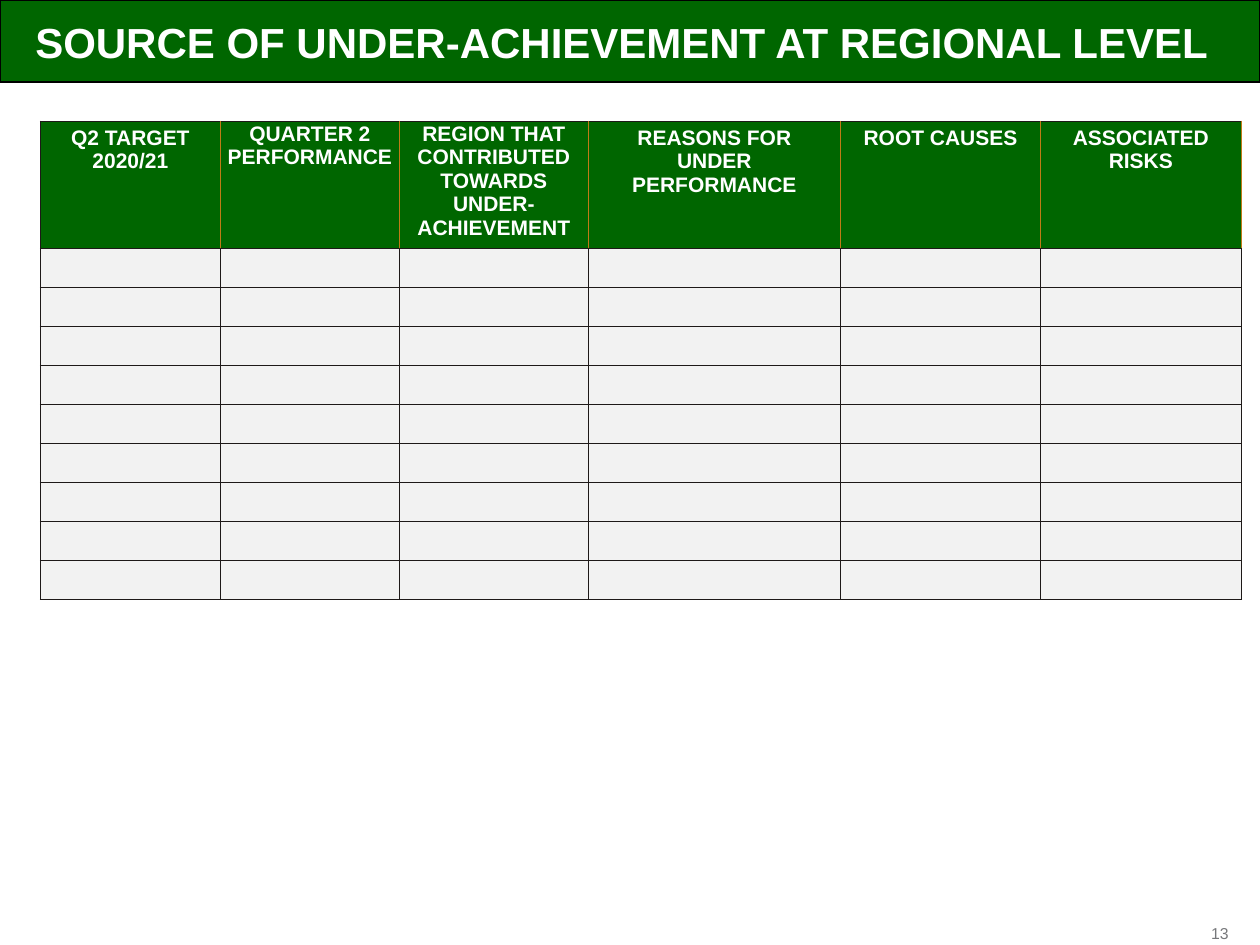
import pptx
import pptx.dml.color
import pptx.enum.shapes
import pptx.enum.text
import pptx.oxml.ns
import pptx.util
from dataclasses import dataclass
from lxml import etree

Inches, Pt = pptx.util.Inches, pptx.util.Pt
RGB = pptx.dml.color.RGBColor.from_string
ALIGN = pptx.enum.text.PP_ALIGN
ANCHOR = pptx.enum.text.MSO_ANCHOR
qn = pptx.oxml.ns.qn


@dataclass(frozen=True)
class Theme:
    font: str = "Arial"
    green: str = "006600"
    white: str = "FFFFFF"
    black: str = "000000"
    grey: str = "77787B"
    body_fill: str = "F2F2F2"
    border: str = "1E1918"
    divider: str = "BF7B17"
    title_size: float = 24
    header_size: float = 12
    number_size: float = 9
    border_width: float = 0.5


class Deck:
    def __init__(self, theme):
        self.theme = theme
        self.prs = pptx.Presentation()
        self.prs.slide_width, self.prs.slide_height = Inches(10), Inches(7.5)
        self.slide = self.prs.slides.add_slide(self.prs.slide_layouts[5])

    def style(self, tf, size, color, align, bold=False):
        for p in tf.paragraphs:
            p.alignment = align
            p.font.name, p.font.size, p.font.bold = self.theme.font, Pt(size), bold
            p.font.color.rgb = RGB(color)

    def banner(self, x, y, w, h):
        sp = self.slide.shapes.add_shape(
            pptx.enum.shapes.MSO_SHAPE.RECTANGLE, *map(Inches, (x, y, w, h)))
        sp.shadow.inherit = False
        sp.fill.solid()
        sp.fill.fore_color.rgb = RGB(self.theme.green)
        sp.line.color.rgb = RGB(self.theme.black)
        sp.line.width = Pt(1)
        # Keep the banner behind the title
        self.slide.shapes.title.element.addprevious(sp.element)

    def title(self, text, x, y, w, h):
        sp = self.slide.shapes.title
        sp.left, sp.top, sp.width, sp.height = map(Inches, (x, y, w, h))
        tf = sp.text_frame
        tf.text = text
        tf.word_wrap = True
        tf.auto_size = pptx.enum.text.MSO_AUTO_SIZE.NONE
        tf.vertical_anchor = ANCHOR.TOP
        self.style(tf, self.theme.title_size, self.theme.white, ALIGN.LEFT, True)

    def page_number(self, text, x, y, w, h):
        tf = self.slide.shapes.add_textbox(*map(Inches, (x, y, w, h))).text_frame
        tf.margin_left = tf.margin_top = tf.margin_right = tf.margin_bottom = 0
        tf.word_wrap = True
        tf.vertical_anchor = ANCHOR.MIDDLE
        tf.text = text
        self.style(tf, self.theme.number_size, self.theme.grey, ALIGN.RIGHT)

    def cell(self, cell, text, fill, margins, borders):
        cell.margin_left = cell.margin_right = Inches(margins[0])
        cell.margin_top, cell.margin_bottom = Inches(margins[1]), Inches(margins[2])
        cell.text = text
        self.style(cell.text_frame, self.theme.header_size, self.theme.white,
                   ALIGN.CENTER, True)
        # Borders come before the fill in the cell properties
        tc_pr = cell._tc.get_or_add_tcPr()
        for side, color in zip("LRTB", borders):
            ln = etree.SubElement(tc_pr, qn(f"a:ln{side}"),
                                  w=str(Pt(self.theme.border_width)))
            solid = etree.SubElement(ln, qn("a:solidFill"))
            etree.SubElement(solid, qn("a:srgbClr"), val=color)
        cell.fill.solid()
        cell.fill.fore_color.rgb = RGB(fill)

    def table(self, headers, x, y, col_widths, row_heights):
        t = self.theme
        n_rows, n_cols = len(row_heights), len(col_widths)
        table = self.slide.shapes.add_table(
            n_rows, n_cols, Inches(x), Inches(y),
            Inches(sum(col_widths)), Inches(sum(row_heights))).table
        table.first_row = table.horz_banding = False
        for column, w in zip(table.columns, col_widths):
            column.width = Inches(w)
        for row, h in zip(table.rows, row_heights):
            row.height = Inches(h)
        for c, (text, margins) in enumerate(headers):
            left = t.border if c == 0 else t.divider
            self.cell(table.cell(0, c), text, t.green, margins,
                      (left, t.divider, t.border, t.border))
            for r in range(1, n_rows):
                self.cell(table.cell(r, c), "", t.body_fill, (0.07, 0, 0),
                          (t.border,) * 4)


def main():
    deck = Deck(Theme())

    # Title band
    deck.banner(0, 0, 10, 0.65)
    deck.title("SOURCE OF UNDER-ACHIEVEMENT AT REGIONAL LEVEL", 0.18, 0.08, 9.66, 0.5)

    # Blank reporting table: \v breaks a line, \n starts a paragraph
    normal, tight = (0.07, 0.04, 0.04), (0.01, 0.01, 0)
    headers = [
        ("Q2 TARGET 2020/21", normal),
        ("QUARTER 2\vPERFORMANCE", tight),
        ("REGION THAT CONTRIBUTED TOWARDS UNDER-ACHIEVEMENT", tight),
        ("REASONS FOR UNDER\nPERFORMANCE", normal),
        ("ROOT CAUSES", normal),
        ("ASSOCIATED RISKS", normal),
    ]
    deck.table(headers, 0.32, 0.96, [1.43, 1.42, 1.5, 2, 1.59, 1.59],
               [1.01] + [0.31] * 9)

    # Footer
    deck.page_number("13", 9.46, 7.33, 0.29, 0.15)
    deck.prs.save("out.pptx")


if __name__ == "__main__":
    main()
